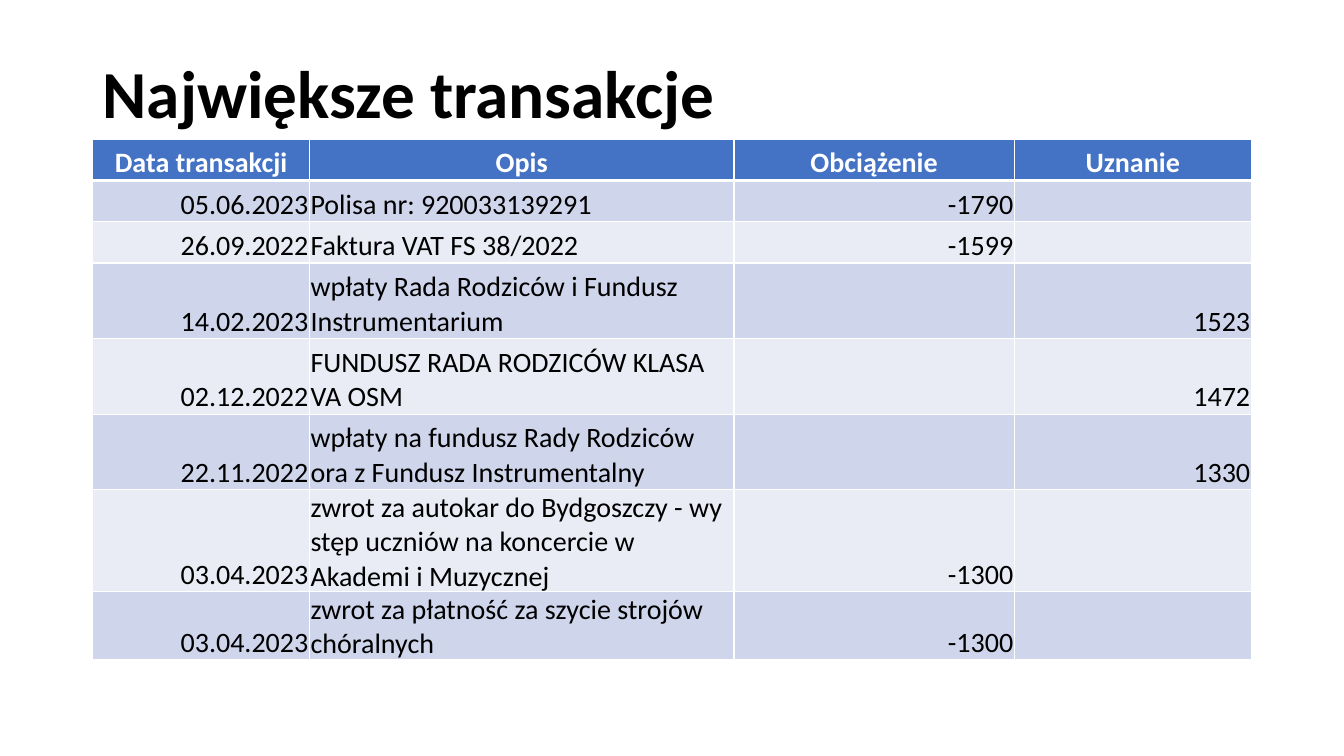
from lxml import etree
from pptx import Presentation
from pptx.dml.color import RGBColor
from pptx.enum.text import MSO_ANCHOR, PP_ALIGN
from pptx.oxml.ns import qn
from pptx.util import Inches, Pt

LEFT, CENTER, RIGHT = PP_ALIGN.LEFT, PP_ALIGN.CENTER, PP_ALIGN.RIGHT
MIDDLE, BOTTOM = MSO_ANCHOR.MIDDLE, MSO_ANCHOR.BOTTOM

TITLE = "Największe transakcje"
HEADERS = ("Data transakcji", "Opis", "Obciążenie", "Uznanie")
TRANSACTIONS = [
    ("05.06.2023", "Polisa nr: 920033139291", "-1790", ""),
    ("26.09.2022", "Faktura VAT FS 38/2022", "-1599", ""),
    ("14.02.2023", "wpłaty Rada Rodziców i Fundusz Instrumentarium", "", "1523"),
    ("02.12.2022", "FUNDUSZ RADA RODZICÓW KLASA VA OSM", "", "1472"),
    ("22.11.2022", "wpłaty na fundusz Rady Rodziców ora z Fundusz Instrumentalny",
     "", "1330"),
    ("03.04.2023", "zwrot za autokar do Bydgoszczy - wy stęp uczniów na koncercie w "
     "Akademi i Muzycznej", "-1300", ""),
    ("03.04.2023", "zwrot za płatność za szycie strojów chóralnych", "-1300", ""),
]
COLUMN_WIDTHS = (2.15, 4.21, 2.78, 2.35)
COLUMN_ALIGNS = (RIGHT, LEFT, RIGHT, RIGHT)
ROW_HEIGHTS = (0.41, 0.41, 0.41, 0.75, 0.75, 0.75, 1, 0.5)
BAND_FILLS = ("CFD5EA", "E9EBF5")
HEADER_FILL, BLACK, WHITE = "4472C4", "000000", "FFFFFF"
MARGIN_LEFT, CONTENT_WIDTH = 0.92, 11.49
CELL_FORMAT = {"margin_left": Inches(0.01), "margin_right": Inches(0.01),
               "margin_top": Inches(0.01), "margin_bottom": 0,
               "vertical_anchor": BOTTOM}


def color(value):
    return RGBColor.from_string(value)


def write(para, text, size, hue, bold, align):
    para.text, para.alignment = text, align
    for name, value in {"name": "Calibri", "size": Pt(size), "bold": bold}.items():
        setattr(para.font, name, value)
    para.font.color.rgb = color(hue)
    for span in para.runs:
        for name, value in {"name": "Calibri", "size": Pt(size), "bold": bold}.items():
            setattr(span.font, name, value)
        span.font.color.rgb = color(hue)


def add_borders(cell, widths):
    properties = cell._tc.get_or_add_tcPr()
    for side, width in widths.items():
        line = etree.SubElement(properties, qn(f"a:ln{side}"), w=str(Pt(width)))
        fill = etree.SubElement(line, qn("a:solidFill"))
        etree.SubElement(fill, qn("a:srgbClr"), val=WHITE)


def add_title(page):
    box = page.shapes.add_textbox(Inches(MARGIN_LEFT), Inches(0.37),
                                  Inches(CONTENT_WIDTH), Inches(1.18))
    frame = box.text_frame
    frame.word_wrap, frame.vertical_anchor = True, MIDDLE
    write(frame.paragraphs[0], TITLE, 48, BLACK, True, LEFT)
    frame.paragraphs[0].line_spacing = 0.9


def add_transactions(page):
    rows = [HEADERS, *TRANSACTIONS]
    table = page.shapes.add_table(
        len(rows), len(HEADERS), Inches(MARGIN_LEFT), Inches(1.38),
        Inches(CONTENT_WIDTH), Inches(sum(ROW_HEIGHTS))).table
    for column, width in zip(table.columns, COLUMN_WIDTHS):
        column.width = Inches(width)
    for row, height in zip(table.rows, ROW_HEIGHTS):
        row.height = Inches(height)
    for r, texts in enumerate(rows):
        header = r == 0
        for c, text in enumerate(texts):
            cell = table.cell(r, c)
            for name, value in CELL_FORMAT.items():
                setattr(cell, name, value)
            add_borders(cell, {"L": 1, "R": 1, "T": 3 if r == 1 else 1,
                               "B": 3 if header else 1})
            cell.fill.solid()
            cell.fill.fore_color.rgb = color(
                HEADER_FILL if header else BAND_FILLS[(r - 1) % 2])
            write(cell.text_frame.paragraphs[0], text, 20,
                  WHITE if header else BLACK, header,
                  CENTER if header else COLUMN_ALIGNS[c])


def main():
    deck = Presentation()
    deck.slide_width, deck.slide_height = Inches(13.33), Inches(7.5)
    page = deck.slides.add_slide(deck.slide_layouts[6])
    add_title(page)
    add_transactions(page)
    deck.save("out.pptx")


if __name__ == "__main__":
    main()
